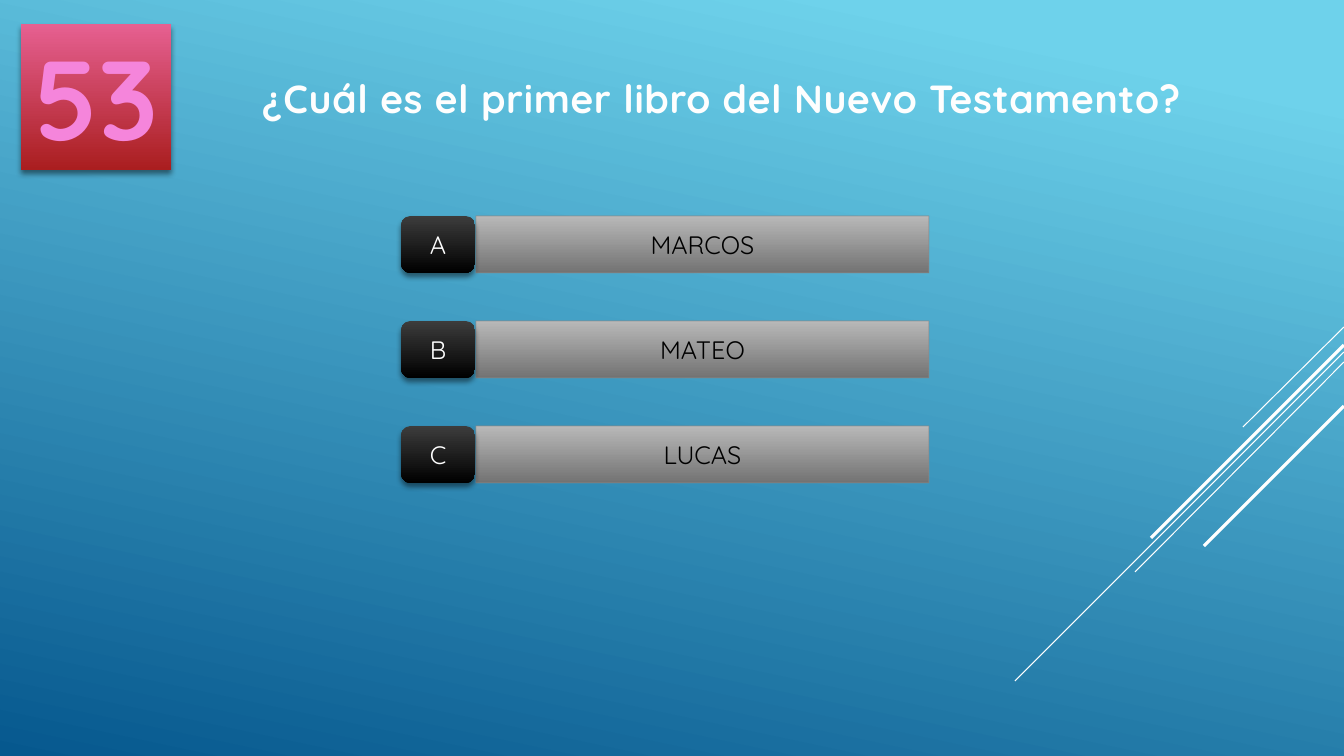
from lxml.etree import SubElement
from pptx import Presentation
from pptx.dml.color import RGBColor
from pptx.enum.shapes import MSO_CONNECTOR, MSO_SHAPE
from pptx.enum.text import MSO_ANCHOR, MSO_AUTO_SIZE, PP_ALIGN
from pptx.oxml.ns import qn
from pptx.util import Emu, Pt

FONT = "Quicksand"
WHITE = RGBColor(0xFF, 0xFF, 0xFF)
BLACK = RGBColor(0x00, 0x00, 0x00)
QUESTION_WHITE = RGBColor(0xFE, 0xFE, 0xFE)
NAVY = RGBColor(0x05, 0x2F, 0x61)
SKY = RGBColor(0x6E, 0xD2, 0xEB)
OCEAN = RGBColor(0x06, 0x58, 0x8E)
SILVER = RGBColor(0xB8, 0xB8, 0xB8)
GREY = RGBColor(0x73, 0x73, 0x73)
BORDER_GREY = RGBColor(0x89, 0x89, 0x89)
CHARCOAL = RGBColor(0x3C, 0x3C, 0x3C)
ROSE = RGBColor(0xE6, 0x60, 0x91)
RED = RGBColor(0xAA, 0x1E, 0x1F)
PINK = RGBColor(0xF5, 0x85, 0xDB)
MAGENTA = RGBColor(0xA5, 0x0E, 0x82)


def px(length):
    return Emu(round(length * 9144000 / 1008))


def add_color(parent, color, alpha=None):
    element = SubElement(parent, qn("a:srgbClr"), val=str(color))
    if alpha is not None:
        SubElement(element, qn("a:alpha"), val=str(alpha * 1000))


def add_shadow(effects):
    shadow = SubElement(effects, qn("a:outerShdw"), blurRad=str(Pt(4)),
                        dist=str(Pt(3)), dir="5400000", rotWithShape="0")
    add_color(shadow, BLACK, 46)


class QuizSlide:
    def __init__(self, presentation):
        self.slide = presentation.slides.add_slide(presentation.slide_layouts[5])

    def gradient(self, fill, colors, angle=90, start=0):
        fill.gradient()
        fill.gradient_angle = 360 - angle
        for stop, color, position in zip(fill.gradient_stops, colors, (start, 1)):
            stop.color.rgb = color
            stop.position = position

    def set_text(self, shape, text, size, color, bold=False, anchor=MSO_ANCHOR.MIDDLE):
        frame = shape.text_frame
        frame.text = text
        frame.word_wrap = True
        frame.vertical_anchor = anchor
        paragraph = frame.paragraphs[0]
        paragraph.alignment = PP_ALIGN.CENTER
        run = paragraph.runs[0]
        run.font.name = FONT
        run.font.size = Pt(size)
        run.font.bold = bold
        run.font.color.rgb = color
        return run

    def outline_text(self, run, color, width):
        line = SubElement(run.font._element, qn("a:ln"), w=str(Pt(width)))
        add_color(SubElement(line, qn("a:solidFill")), color)
        run.font._element.insert(0, line)

    def box(self, kind, left, top, width, height, colors, shadow=True):
        shape = self.slide.shapes.add_shape(
            kind, px(left), px(top), px(width), px(height))
        self.gradient(shape.fill, colors)
        shape.line.fill.background()
        shape.shadow.inherit = False
        if shadow:
            add_shadow(shape._element.spPr.find(qn("a:effectLst")))
        return shape

    def diagonal(self, top, end_left, end_top, width):
        line = self.slide.shapes.add_connector(
            MSO_CONNECTOR.STRAIGHT, px(1344), px(top), px(end_left), px(end_top))
        line.line.color.rgb = WHITE
        line.line.width = Pt(width)
        SubElement(line._element.spPr, qn("a:effectLst"))

    def question(self, text):
        title = self.slide.shapes.title
        title.left, title.top, title.width, title.height = map(px, (183, 69, 1078, 57))
        run = self.set_text(title, text, 28, QUESTION_WHITE, True, MSO_ANCHOR.TOP)
        title.text_frame.auto_size = MSO_AUTO_SIZE.SHAPE_TO_FIT_TEXT
        properties = run.font._element
        properties.set("spc", "50")
        self.outline_text(run, NAVY, 0.75)
        effects = SubElement(properties, qn("a:effectLst"))
        add_shadow(effects)
        properties.find(qn("a:solidFill")).addnext(effects)

    def answer(self, top, letter, text):
        bar = self.box(MSO_SHAPE.RECTANGLE, 476, top, 453, 57, (SILVER, GREY), False)
        bar.line.color.rgb = BORDER_GREY
        bar.line.width = Pt(0.75)
        border = bar._element.spPr.find(qn("a:ln")).find(".//" + qn("a:srgbClr"))
        SubElement(border, qn("a:alpha"), val="60000")
        self.set_text(bar, text, 18, BLACK)
        tile = self.box(MSO_SHAPE.ROUNDED_RECTANGLE, 401, top, 74, 57, (CHARCOAL, BLACK))
        self.set_text(tile, letter, 18, WHITE)

    def number(self, text):
        badge = self.box(MSO_SHAPE.RECTANGLE, 21, 24, 150, 146, (ROSE, RED))
        run = self.set_text(badge, text, 80, PINK, True, MSO_ANCHOR.TOP)
        badge.text_frame.auto_size = MSO_AUTO_SIZE.SHAPE_TO_FIT_TEXT
        self.outline_text(run, MAGENTA, 1.75)


def main():
    presentation = Presentation()
    presentation.slide_width, presentation.slide_height = px(1344), px(756)
    quiz = QuizSlide(presentation)

    # Background and diagonal lines
    quiz.gradient(quiz.slide.background.fill, (SKY, OCEAN), angle=102, start=0.1)
    for diagonal in ((327, 1243, 427, 0.75), (352, 1015, 681, 0.75),
                     (362, 1135, 572, 0.75), (345, 1151, 538, 2.25),
                     (406, 1204, 546, 2.25)):
        quiz.diagonal(*diagonal)

    # Question and its number
    quiz.question("¿Cuál es el primer libro del Nuevo Testamento?")
    quiz.number("53")

    # Answers
    for row, (letter, text) in enumerate(zip("ABC", ("MARCOS", "MATEO", "LUCAS"))):
        quiz.answer(216 + 105 * row, letter, text)

    presentation.save("out.pptx")


if __name__ == "__main__":
    main()
